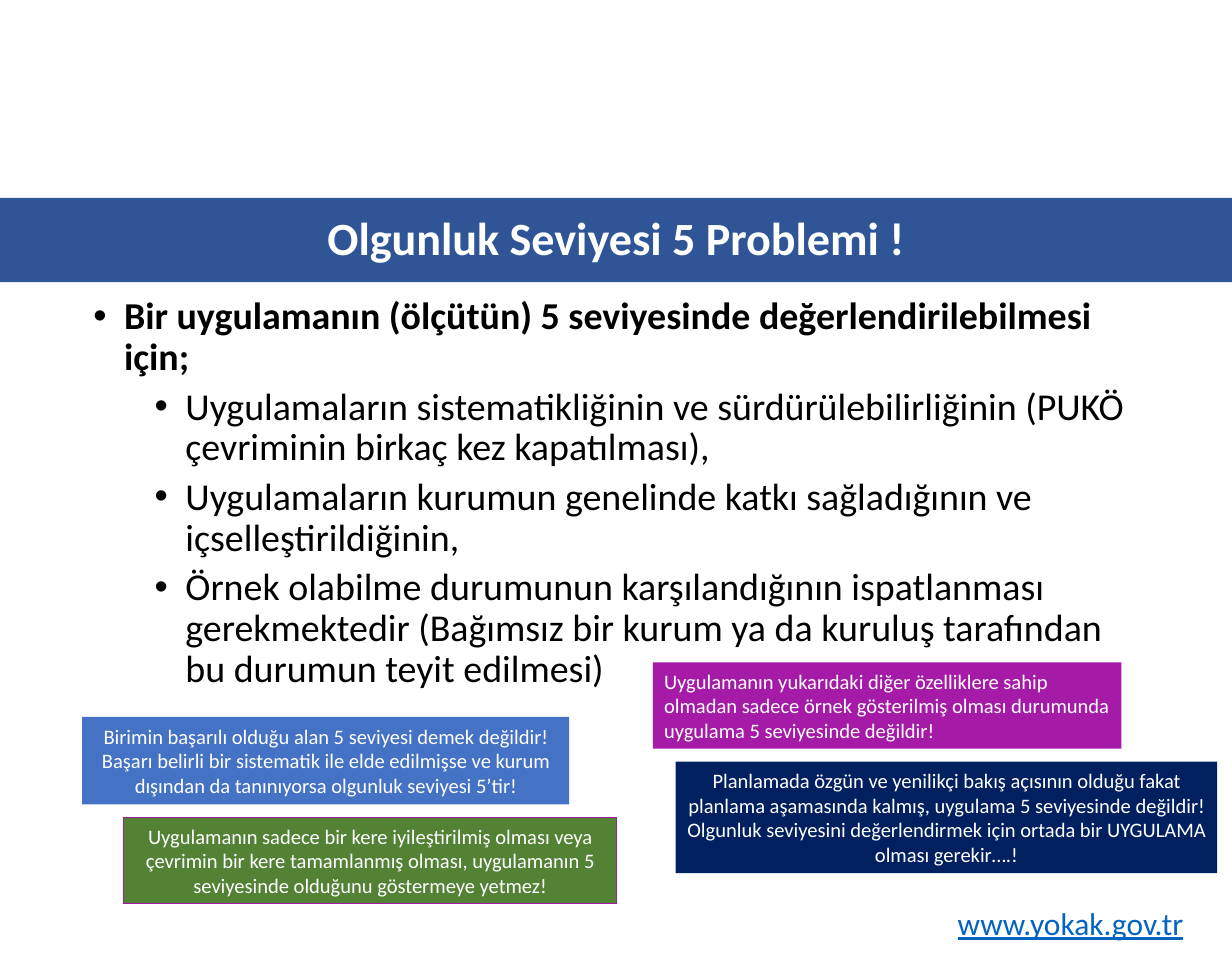
"""Build the slide on what maturity level 5 requires."""
from dataclasses import dataclass

from lxml import etree
from pptx import Presentation
from pptx import util as u
from pptx.dml.color import RGBColor
from pptx.enum import shapes, text
from pptx.oxml.ns import qn

WIDTH, HEIGHT = u.Inches(10.83), u.Inches(8.47)
COLUMN, ROW = WIDTH / 30, HEIGHT / 24
FONT = "Calibri"
INDENT = u.Inches(0.27)

WHITE = RGBColor(0xFF, 0xFF, 0xFF)
BLACK = RGBColor(0x00, 0x00, 0x00)
BANNER_BLUE = RGBColor(0x2F, 0x55, 0x97)
BLUE = RGBColor(0x44, 0x72, 0xC4)
PURPLE = RGBColor(0xA5, 0x1B, 0xA8)
GREEN = RGBColor(0x54, 0x82, 0x35)
NAVY = RGBColor(0x00, 0x20, 0x60)
LINK_BLUE = RGBColor(0x05, 0x63, 0xC1)

LEFT, CENTER = text.PP_ALIGN.LEFT, text.PP_ALIGN.CENTER


@dataclass(frozen=True)
class Area:
    """Place on the grid, in columns and rows."""
    column: float
    row: float
    columns: float
    rows: float

    def emu(self) -> tuple[int, ...]:
        """Return left, top, width and height."""
        return (round(self.column * COLUMN), round(self.row * ROW),
                round(self.columns * COLUMN), round(self.rows * ROW))


@dataclass(frozen=True)
class Warning:
    """Coloured box with one caution."""
    area: Area
    fill: RGBColor
    words: str
    align: text.PP_ALIGN = CENTER
    outline: RGBColor | None = None


@dataclass(frozen=True)
class Condition:
    """Bulleted statement of the body."""
    words: str
    level: int = 1


WARNINGS = [
    Warning(Area(2, 17.85, 11.86, 2.18), BLUE,
            "Birimin başarılı olduğu alan 5 seviyesi demek değildir! Başarı belirli bir "
            "sistematik ile elde edilmişse ve kurum dışından da tanınıyorsa olgunluk "
            "seviyesi 5’tir!"),
    Warning(Area(15.9, 16.49, 11.41, 2.15), PURPLE,
            "Uygulamanın yukarıdaki diğer özelliklere sahip olmadan sadece örnek "
            "gösterilmiş olması durumunda uygulama 5 seviyesinde değildir!", align=LEFT),
    Warning(Area(3, 20.35, 12.02, 2.15), GREEN,
            "Uygulamanın sadece bir kere iyileştirilmiş olması veya çevrimin bir kere "
            "tamamlanmış olması, uygulamanın 5 seviyesinde olduğunu göstermeye yetmez!",
            outline=PURPLE),
    Warning(Area(16.45, 18.96, 13.19, 2.78), NAVY,
            "Planlamada özgün ve yenilikçi bakış açısının olduğu fakat planlama aşamasında "
            "kalmış, uygulama 5 seviyesinde değildir! Olgunluk seviyesini değerlendirmek "
            "için ortada bir UYGULAMA olması gerekir….!"),
]

CONDITIONS = [
    Condition("Bir uygulamanın (ölçütün) 5 seviyesinde değerlendirilebilmesi için;", 0),
    Condition("Uygulamaların sistematikliğinin ve sürdürülebilirliğinin (PUKÖ çevriminin "
              "birkaç kez kapatılması),"),
    Condition("Uygulamaların kurumun genelinde katkı sağladığının ve içselleştirildiğinin,"),
    Condition("Örnek olabilme durumunun karşılandığının ispatlanması gerekmektedir (Bağımsız "
              "bir kurum ya da kuruluş tarafından bu durumun teyit edilmesi)"),
]


def write(paragraph, words: str, *, size: float, color: RGBColor, bold: bool = False,
          underline: bool = False, align: text.PP_ALIGN = LEFT, spacing: float = 1.0) -> None:
    """Put formatted words into a paragraph."""
    paragraph.alignment = align
    paragraph.line_spacing = spacing
    run = paragraph.add_run()
    run.text = words
    font = run.font
    font.name, font.size, font.bold, font.underline = FONT, u.Pt(size), bold, underline
    font.color.rgb = color


def add_bullet(paragraph, level: int) -> None:
    """Give a paragraph a hanging bullet for its level."""
    paragraph.level = level
    properties = paragraph._p.get_or_add_pPr()
    properties.set("marL", str(INDENT * (1 + 2 * level)))
    properties.set("indent", str(-INDENT))
    etree.SubElement(properties, qn("a:buFont")).set("typeface", "Arial")
    etree.SubElement(properties, qn("a:buChar")).set("char", "•")


def add_panel(slide, area: Area, fill: RGBColor, outline: RGBColor | None = None):
    """Draw a filled rectangle and return its first paragraph."""
    panel = slide.shapes.add_shape(shapes.MSO_SHAPE.RECTANGLE, *area.emu())
    panel.shadow.inherit = False
    panel.fill.solid()
    panel.fill.fore_color.rgb = fill
    if outline is None:
        panel.line.fill.background()
    else:
        panel.line.color.rgb = outline
        panel.line.width = u.Pt(0.75)
    frame = panel.text_frame
    frame.word_wrap = True
    frame.vertical_anchor = text.MSO_ANCHOR.MIDDLE
    return frame.paragraphs[0]


def add_text_frame(slide, area: Area):
    """Add a wrapping text box and return its frame."""
    frame = slide.shapes.add_textbox(*area.emu()).text_frame
    frame.word_wrap = True
    return frame


def add_conditions(slide, area: Area, conditions: list[Condition]) -> None:
    """Write the bulleted conditions."""
    frame = add_text_frame(slide, area)
    for index, condition in enumerate(conditions):
        paragraph = frame.add_paragraph() if index else frame.paragraphs[0]
        add_bullet(paragraph, condition.level)
        if index:
            paragraph.space_before = u.Pt(5.4)
        write(paragraph, condition.words, size=24, color=BLACK,
              bold=condition.level == 0, spacing=0.9)


def main() -> None:
    """Assemble and save the slide."""
    deck = Presentation()
    deck.slide_width, deck.slide_height = WIDTH, HEIGHT
    slide = deck.slides.add_slide(deck.slide_layouts[6])

    heading = add_panel(slide, Area(0, 4.93, 30, 2.1), BANNER_BLUE)
    write(heading, "Olgunluk Seviyesi 5 Problemi !", size=29.2, color=WHITE,
          bold=True, align=CENTER, spacing=0.9)
    add_conditions(slide, Area(2, 7.25, 26.04, 7.03), CONDITIONS)
    for warning in WARNINGS:
        caution = add_panel(slide, warning.area, warning.fill, warning.outline)
        write(caution, warning.words, size=13, color=WHITE, align=warning.align)
    website = add_text_frame(slide, Area(23.05, 22.36, 6.45, 1.25)).paragraphs[0]
    write(website, "www.yokak.gov.tr", size=19.9, color=LINK_BLUE, underline=True)

    deck.save("out.pptx")


if __name__ == "__main__":
    main()
